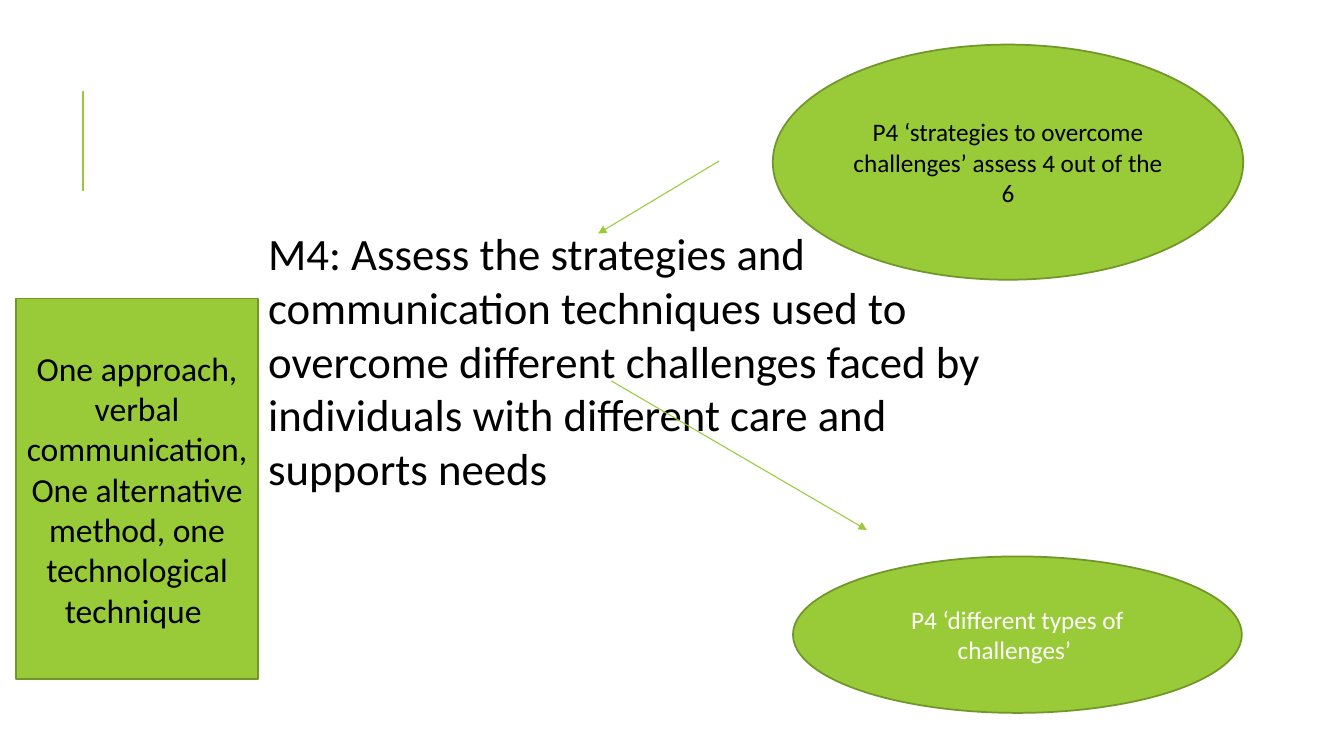
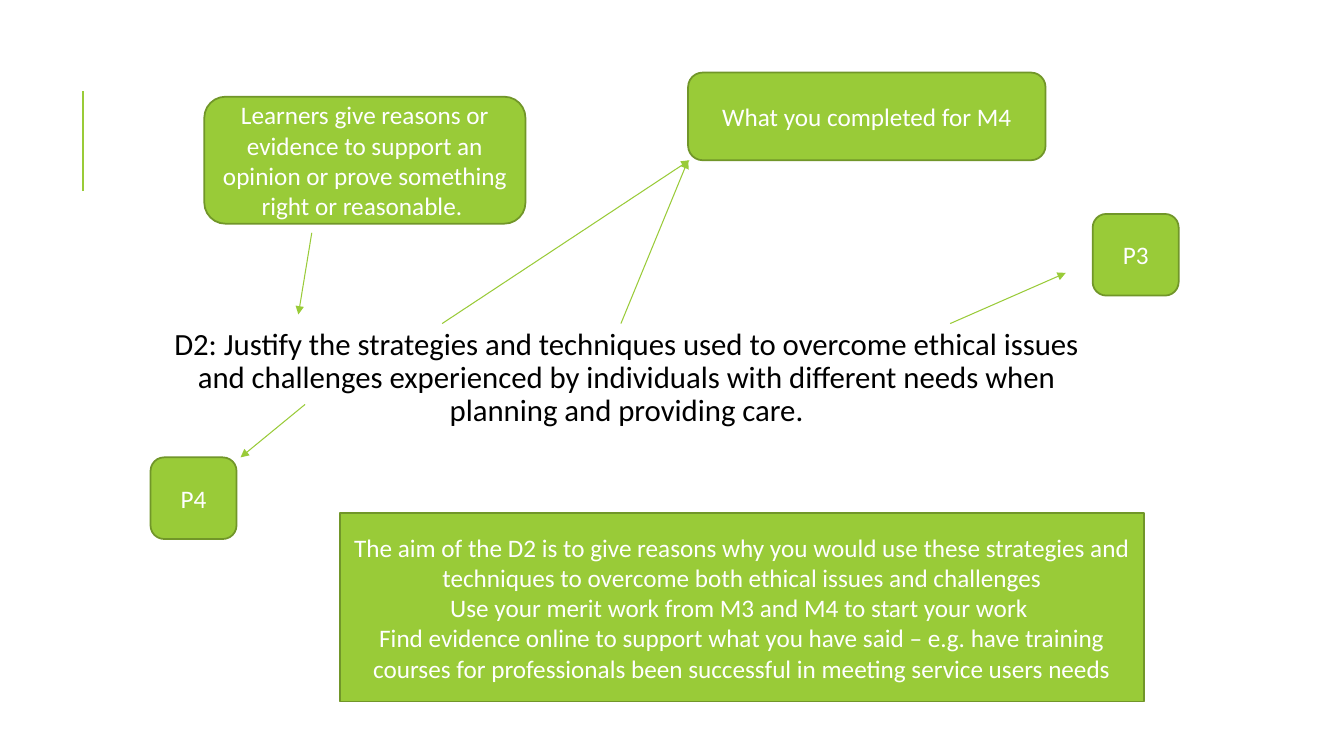
from dataclasses import dataclass

from lxml.etree import SubElement as Sub
from pptx import Presentation
from pptx.dml.color import RGBColor as Rgb
from pptx.enum.shapes import MSO_CONNECTOR as Link, MSO_SHAPE as Kind
from pptx.enum.text import MSO_ANCHOR as Anchor, MSO_AUTO_SIZE as Fit, PP_ALIGN as Align
from pptx.oxml.ns import qn
from pptx.util import Inches, Pt

HUES = {"lime": "99CB38", "edge": "719629", "ink": "000000", "page": "FFFFFF"}
FACE = "Calibri"
WIDE, HIGH = Inches(13.333), Inches(7.5)


@dataclass(frozen=True)
class Area:
    left: float
    top: float
    width: float
    height: float

    def place(self) -> tuple[int, int, int, int]:
        return across(self.left), down(self.top), across(self.width), down(self.height)


@dataclass(frozen=True)
class Note:
    kind: Kind
    area: Area
    lines: tuple[str, ...]
    size: int = 18
    hue: str = "page"


@dataclass(frozen=True)
class Arrow:
    start: tuple[float, float]
    end: tuple[float, float]


def across(share: float) -> int:
    return round(WIDE * share / 100)


def down(share: float) -> int:
    return round(HIGH * share / 100)


def tint(name: str) -> Rgb:
    return Rgb.from_string(HUES[name])


def write(frame, lines: tuple[str, ...], size: int, hue: str, align: Align) -> None:
    frame.word_wrap = True
    frame.auto_size = Fit.NONE
    frame.text = "\n".join(lines)
    for para in frame.paragraphs:
        para.alignment = align
        para.font.name = FACE
        para.font.size = Pt(size)
        para.font.color.rgb = tint(hue)


def settle(holder, area: Area) -> None:
    holder.left, holder.top, holder.width, holder.height = area.place()
    holder.text_frame.vertical_anchor = Anchor.TOP


def add_line(slide, arrow: Arrow, weight: float):
    (x1, y1), (x2, y2) = arrow.start, arrow.end
    line = slide.shapes.add_connector(
        Link.STRAIGHT, across(x1), down(y1), across(x2), down(y2))
    line.line.color.rgb = tint("lime")
    line.line.width = Pt(weight)
    Sub(line.element.spPr, qn("a:effectLst"))
    return line


def add_arrow(slide, arrow: Arrow) -> None:
    line = add_line(slide, arrow, 0.75)
    Sub(line.line._get_or_add_ln(), qn("a:tailEnd"), type="triangle")


def add_note(slide, note: Note) -> None:
    shape = slide.shapes.add_shape(note.kind, *note.area.place())
    shape.shadow.inherit = False
    shape.fill.solid()
    shape.fill.fore_color.rgb = tint("lime")
    shape.line.color.rgb = tint("edge")
    shape.line.width = Pt(1.25)
    shape.text_frame.vertical_anchor = Anchor.MIDDLE
    write(shape.text_frame, note.lines, note.size, note.hue, Align.CENTER)


def add_parts(slide, parts: tuple[Note | Arrow, ...]) -> None:
    for part in parts:
        if isinstance(part, Note):
            add_note(slide, part)
        else:
            add_arrow(slide, part)


def add_rail(deck, slide) -> None:
    rail = add_line(slide, Arrow((6.2, 25.3), (6.2, 12)), 1.5)
    deck.slide_master.element.cSld.spTree.append(rail.element)


def add_merit(deck):
    slide = deck.slides.add_slide(deck.slide_layouts[5])
    title = slide.shapes.title
    settle(title, Area(19.2, 29.2, 57.5, 37.2))
    write(title.text_frame, (
        "M4: Assess the strategies and communication techniques used to overcome "
        "different challenges faced by individuals with different care and supports needs",
    ), 32, "ink", Align.LEFT)
    add_parts(slide, (
        Arrow((53.5, 21.3), (44.5, 30.9)),
        Note(Kind.OVAL, Area(57.5, 5.9, 35, 31.1),
             ("P4 ‘strategies to overcome challenges’ assess 4 out of the 6",), hue="ink"),
        Note(Kind.RECTANGLE, Area(1.2, 39.5, 18, 50.3),
             ("One approach, verbal communication, One alternative method, "
              "one technological technique ",), 24, "ink"),
        Arrow((45.5, 50.4), (64.5, 70.1)),
        Note(Kind.OVAL, Area(59, 73.6, 33.4, 20.7),
             ("P4 ‘different types of challenges’ ",)),
    ))
    return slide


def add_goal(deck) -> None:
    slide = deck.slides.add_slide(deck.slide_layouts[1])
    title = slide.shapes.title.element
    title.getparent().remove(title)
    body = slide.placeholders[1]
    top = 42.8
    settle(body, Area(11.2, top, 70.1, 21.3))
    frame = body.text_frame
    frame.margin_left = frame.margin_right = Inches(0.05)
    frame.margin_top = frame.margin_bottom = Inches(0.05)
    write(frame, (
        "D2: Justify the strategies and techniques used to overcome ethical issues and "
        "challenges experienced by individuals with different needs when planning and "
        "providing care.",
    ), 22, "ink", Align.CENTER)
    para = frame.paragraphs[0]
    para.line_spacing = 0.9
    para.space_before, para.space_after = Pt(12), Pt(2)
    props = para._p.get_or_add_pPr()
    props.set("marL", str(Inches(0.1)))
    props.set("indent", str(-Inches(0.1)))
    Sub(Sub(props, qn("a:buClr")), qn("a:srgbClr"), val=HUES["lime"])
    Sub(props, qn("a:buChar"), char=" ")

    add_parts(slide, (
        Arrow((23.2, 30.8), (22.2, 41.6)),
        Note(Kind.ROUNDED_RECTANGLE, Area(15.2, 12.8, 23.9, 16.8),
             ("Learners give reasons or evidence to support an opinion or prove "
              "something right or reasonable. ",)),
        Arrow((32.9, top), (51.3, 21.2)),
        Arrow((46.2, top), (51.2, 21.2)),
        Note(Kind.ROUNDED_RECTANGLE, Area(51.2, 9.6, 26.6, 11.6),
             ("What you completed for M4",)),
        Note(Kind.ROUNDED_RECTANGLE, Area(81.3, 28.3, 6.4, 10.8), ("P3",)),
        Arrow((70.7, top), (79.3, 36.1)),
        Arrow((22.7, 53.5), (17.9, 60.5)),
        Note(Kind.ROUNDED_RECTANGLE, Area(11.2, 60.5, 6.4, 10.8), ("P4",)),
        Note(Kind.RECTANGLE, Area(25.3, 67.9, 59.8, 24.9), (
            "The aim of the D2 is to give reasons why you would use these strategies and "
            "techniques to overcome both ethical issues and challenges",
            "Use your merit work from M3 and M4 to start your work ",
            "Find evidence online to support what you have said – e.g. have training "
            "courses for professionals been successful in meeting service users needs",
        )),
    ))


def main() -> None:
    deck = Presentation()
    deck.slide_width, deck.slide_height = WIDE, HIGH
    add_rail(deck, add_merit(deck))
    add_goal(deck)
    deck.save("out.pptx")


if __name__ == "__main__":
    main()
